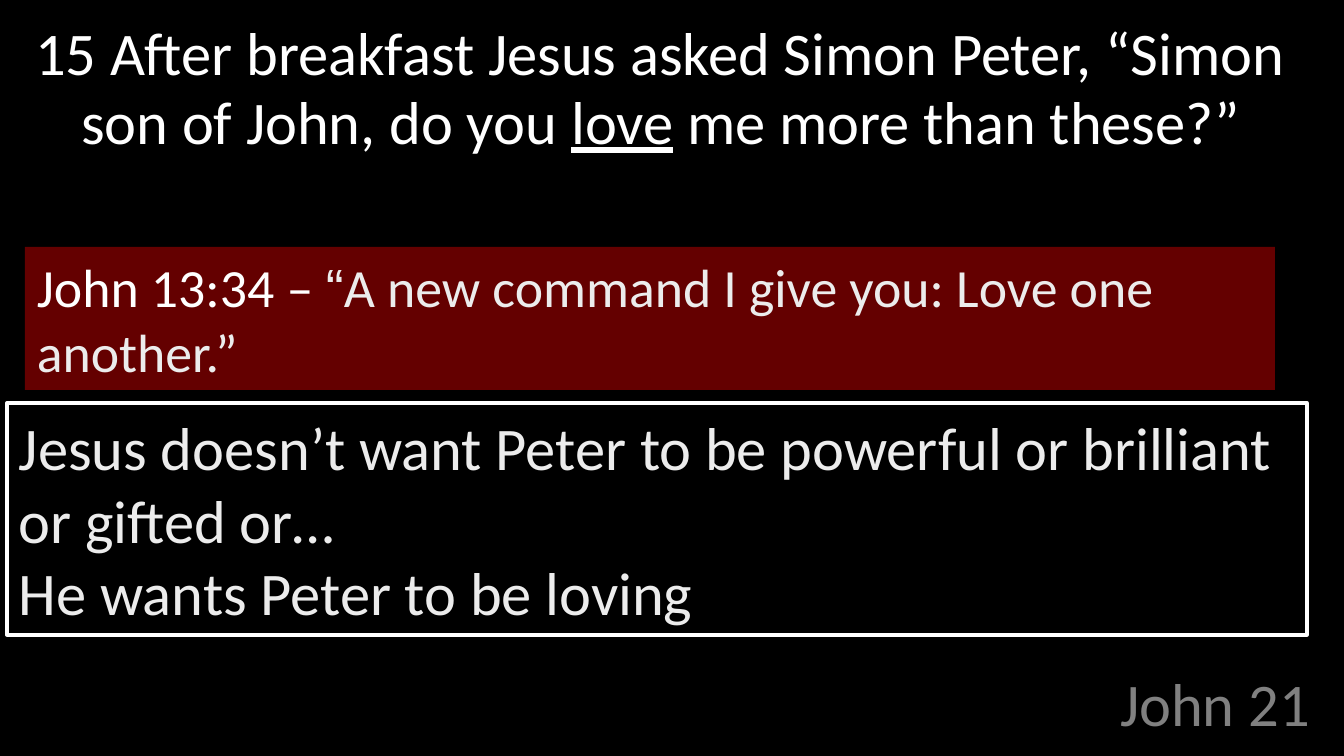
from dataclasses import dataclass

from lxml import etree
from pptx import Presentation
from pptx import util as u
from pptx.dml.color import RGBColor
from pptx.enum import shapes, text

PX = 914400 / 121  # EMU per pixel


@dataclass(frozen=True)
class Theme:
    font: str = "Calibri"
    quote_font: str = "Arial"
    background: str = "000000"
    white: str = "FFFFFF"
    pale: str = "ECECEC"
    gray: str = "808080"
    crimson: str = "640000"
    large: int = 36
    medium: int = 32


THEME = Theme()


def place(shape, *box):
    shape.left, shape.top, shape.width, shape.height = (round(n * PX) for n in box)


def write(paragraph, runs, size, color, align=text.PP_ALIGN.LEFT):
    """Fill a paragraph with runs and return them."""
    paragraph.alignment = align
    paragraph.font.size = u.Pt(size)
    paragraph.font.name = THEME.font
    paragraph.font.color.rgb = RGBColor.from_string(color)
    added = []
    for words in runs:
        run = paragraph.add_run()
        run.text = words
        added.append(run)
    return added


# Slide
deck = Presentation()
deck.slide_width, deck.slide_height = round(1344 * PX), round(756 * PX)
slide = deck.slides.add_slide(deck.slide_layouts[1])
slide.background.fill.solid()
slide.background.fill.fore_color.rgb = RGBColor.from_string(THEME.background)

# Chapter reference, bottom right
chapter = slide.shapes.title
place(chapter, 854, 673, 468, 71)
chapter.text_frame.auto_size = text.MSO_AUTO_SIZE.NONE
chapter.text_frame.vertical_anchor = text.MSO_ANCHOR.BOTTOM
reference = chapter.text_frame.paragraphs[0]
reference.line_spacing = 0.8
write(reference, ["John 21"], THEME.large, THEME.gray, text.PP_ALIGN.RIGHT)

# Passage with a hanging indent and no bullet
passage = slide.placeholders[1]
place(passage, 23, 14, 1300, 640)
passage.text_frame.auto_size = text.MSO_AUTO_SIZE.NONE
question = passage.text_frame.paragraphs[0]
question.line_spacing = 0.95
before, love, after = write(
    question,
    ["15 After breakfast Jesus asked Simon Peter, “Simon son of John, do you ",
     "love", " me more than these?”"],
    THEME.large, THEME.white)
love.font.underline = True
hanging = question._p.get_or_add_pPr()
hanging.set("marL", str(round(46 * PX)))
hanging.set("indent", str(round(-46 * PX)))
bullet = etree.Element("{http://schemas.openxmlformats.org/drawingml/2006/main}buNone")
hanging.find("{*}defRPr").addprevious(bullet)

# Boxes: place, fill, outline
panels = []
for box, fill, outline in [
    ((25, 247, 1250, 143), THEME.crimson, None),
    ((7, 403, 1300, 232), THEME.background, THEME.white),
]:
    panel = slide.shapes.add_shape(shapes.MSO_SHAPE.RECTANGLE, 0, 0, 0, 0)
    place(panel, *box)
    panel.shadow.inherit = False
    panel.fill.solid()
    panel.fill.fore_color.rgb = RGBColor.from_string(fill)
    if outline:
        panel.line.color.rgb = RGBColor.from_string(outline)
        panel.line.width = u.Pt(2)
    else:
        panel.line.fill.background()
    panel.text_frame.word_wrap = True
    panels.append(panel.text_frame)
verse, lesson = panels

# Verse
citation, quote, command = write(
    verse.paragraphs[0],
    ["John 13:34 – ", "“", "A new command I give you: Love one another.”"],
    THEME.medium, THEME.pale)
citation.font.color.rgb = RGBColor.from_string(THEME.white)
quote.font.name = THEME.quote_font

# Lesson
write(lesson.paragraphs[0],
      ["Jesus doesn’t want Peter to be powerful or brilliant or gifted or…"],
      THEME.large, THEME.pale)
write(lesson.add_paragraph(), ["He wants Peter to be loving"], THEME.large, THEME.pale)

deck.save("out.pptx")
